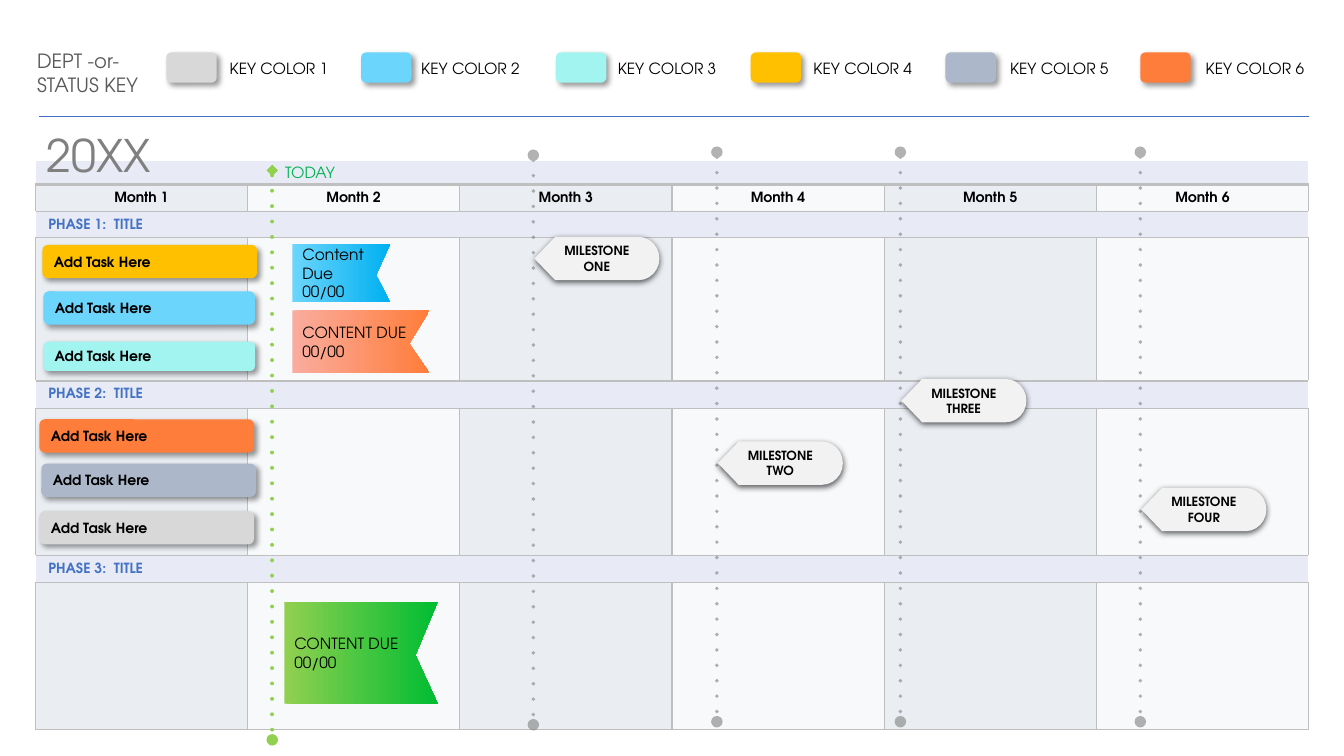
"""Build a six-month roadmap slide with a colour key, phases, tasks and milestones."""
from lxml import etree
from pptx import Presentation
from pptx.dml.color import RGBColor
from pptx.enum import shapes, text
from pptx.oxml import ns
from pptx.util import Inches, Pt

FONT = "TeX Gyre Adventor"
COLORS = {
    "grey": "D8D8D8", "blue": "6CD5FC", "aqua": "A1F4EF", "gold": "FFC000",
    "slate": "ACB8CA", "orange": "FF7D3A", "band": "E8EBF5", "odd": "EAEEF3",
    "even": "F7F9FB", "border": "BFBFBF", "phase": "4472C4", "rule": "3F6FC3",
    "black": "000000", "key": "595959", "year": "808080", "today": "00B050",
    "today_line": "92D050", "line": "7F7F7F", "milestone": "F2F2F2",
    "deep_blue": "00B0F0", "pink": "FAAC9F", "green": "00BD32",
}
RGB = {name: RGBColor.from_string(value) for name, value in COLORS.items()}


def write(tf, content, size, color="black", bold=False, align=text.PP_ALIGN.LEFT):
    """Fill a text frame and format its runs."""
    tf.text = content
    for p in tf.paragraphs:
        p.alignment = align
        for r in p.runs:
            r.font.name, r.font.size, r.font.bold = FONT, Pt(size), bold
            r.font.color.rgb = RGB[color]


def add_box(kind, x, y, w, h, color, alpha=40, blur=4, dist=3, angle=45):
    """Add a borderless filled shape with a soft shadow."""
    sp = s.shapes.add_shape(kind, Inches(x), Inches(y), Inches(w), Inches(h))
    sp.fill.solid()
    sp.fill.fore_color.rgb = RGB[color]
    sp.line.fill.background()
    sp.shadow.inherit = False
    effects = sp._element.spPr.find(ns.qn("a:effectLst"))
    shadow = etree.SubElement(effects, ns.qn("a:outerShdw"), blurRad=str(Pt(blur)),
                              dist=str(Pt(dist)), dir=str(angle * 60000), algn="t", rotWithShape="0")
    clr = etree.SubElement(shadow, ns.qn("a:srgbClr"), val=COLORS["black"])
    etree.SubElement(clr, ns.qn("a:alpha"), val=str(alpha * 1000))
    return sp


prs = Presentation()
prs.slide_width, prs.slide_height = Inches(13.33), Inches(7.5)
s = prs.slides.add_slide(prs.slide_layouts[5])

row_heights = [0.24, 0.27, 0.26, 1.42, 0.27, 1.46, 0.27, 1.46]
phase_rows = {2: "PHASE 1:  TITLE", 4: "PHASE 2:  TITLE", 6: "PHASE 3:  TITLE"}
frame = s.shapes.add_table(8, 6, Inches(0.35), Inches(1.59), Inches(12.63), Inches(5.64))
tbl = frame.table
tbl.first_row = tbl.horz_banding = False
for col in tbl.columns:
    col.width = Inches(12.63 / 6)
for i, height in enumerate(row_heights):
    tbl.rows[i].height = Inches(height)
    for j in range(6):
        cell = tbl.cell(i, j)
        cell.margin_left = cell.margin_right = cell.margin_top = Inches(0.01)
        cell.margin_bottom = 0
        cell.vertical_anchor = text.MSO_ANCHOR.MIDDLE
        if i == 0:
            sides = {"B": 2.25}
        elif i in phase_rows:
            sides = {"T": 1, "B": 1}
        else:
            sides = {"L": 1, "R": 1, "T": 2.25 if i == 1 else 1, "B": 1}
        tcPr = cell._tc.get_or_add_tcPr()
        for side, width in sides.items():
            ln = etree.SubElement(tcPr, ns.qn(f"a:ln{side}"), w=str(Pt(width)))
            fill = etree.SubElement(ln, ns.qn("a:solidFill"))
            etree.SubElement(fill, ns.qn("a:srgbClr"), val=COLORS["border"])
        is_band = i == 0 or i in phase_rows
        cell.fill.solid()
        cell.fill.fore_color.rgb = RGB["band" if is_band else ("odd", "even")[j % 2]]
        if i == 1:
            write(cell.text_frame, f"Month {j + 1}", 10, bold=True, align=text.PP_ALIGN.CENTER)
        elif i in phase_rows and j == 0:
            cell.margin_left = Inches(0.13)
            write(cell.text_frame, phase_rows[i], 10, "phase", True)
        else:
            cell.text_frame.paragraphs[0]._p.get_or_add_endParaRPr().set("sz", "1000")
    if is_band:
        tbl.cell(i, 0).merge(tbl.cell(i, 5))

labels = [(0.27, 0.44, 1.23, 0.58, "DEPT -or-\nSTATUS KEY", 14, "key"),
          (2.73, 1.57, 0.85, 0.29, "TODAY", 11, "today")]
key_colors = ["grey", "blue", "aqua", "gold", "slate", "orange"]
key_lefts = [2.18, 4.08, 6.03, 7.97, 9.92, 11.86]
for i, (color, left) in enumerate(zip(key_colors, key_lefts)):
    add_box(shapes.MSO_SHAPE.ROUNDED_RECTANGLE, 1.65 + 1.932 * i, 0.52, 0.5, 0.3, color)
    labels.append((left, 0.54, 1.24, 0.29, f"KEY COLOR {i + 1}", 11, "black"))
for x, y, w, h, content, size, color in labels:
    tb = s.shapes.add_textbox(Inches(x), Inches(y), Inches(w), Inches(h))
    tb.text_frame.word_wrap = True
    write(tb.text_frame, content, size, color)

milestones = [(5.29, 1.54, 2.35, "MILESTONE ONE"), (7.11, 1.51, 4.38, "MILESTONE TWO"),
              (8.93, 1.51, 3.76, "MILESTONE THREE"), (11.31, 1.51, 4.84, "MILESTONE FOUR")]
lines = [(x, top, x, top + 5.65, "line", "oval") for x, top, _, _ in milestones]
lines += [(2.7, 1.69, 2.7, 7.34, "today_line", "diamond"),
          (0.39, 1.16, 12.98, 1.16, "rule", None)]
for x1, y1, x2, y2, color, head in lines:
    cn = s.shapes.add_connector(shapes.MSO_CONNECTOR.STRAIGHT, Inches(x1), Inches(y1),
                                Inches(x2), Inches(y2))
    cn.line.color.rgb = RGB[color]
    cn.line.width = Pt(2.75 if head else 0.75)
    etree.SubElement(cn._element.spPr, ns.qn("a:effectLst"))
    if head:
        ln = cn.line._get_or_add_ln()
        ln.set("cap", "rnd")
        etree.SubElement(ln, ns.qn("a:prstDash"), val="dot")
        etree.SubElement(ln, ns.qn("a:round"))
        etree.SubElement(ln, ns.qn("a:headEnd"), type=head)
        etree.SubElement(ln, ns.qn("a:tailEnd"), type="oval")
        if color == "line":
            etree.SubElement(ln.find(".//" + ns.qn("a:srgbClr")), ns.qn("a:alpha"), val="60000")

for x, _, y, name in milestones:
    sp = add_box(shapes.MSO_SHAPE.FLOWCHART_DISPLAY, x + 0.01, y, 1.24, 0.43, "milestone",
                 63, 4.5, 1.5, 90)
    tf = sp.text_frame
    tf.margin_left = tf.margin_right = tf.margin_top = tf.margin_bottom = 0
    write(tf, name, 9, bold=True, align=text.PP_ALIGN.CENTER)

tasks = [(0.42, 2.43, 2.13, 0.33, "gold"), (0.43, 2.89, 2.1, 0.33, "blue"),
         (0.43, 3.39, 2.1, 0.29, "aqua"), (0.39, 4.16, 2.13, 0.33, "orange"),
         (0.41, 4.6, 2.13, 0.33, "slate"), (0.39, 5.07, 2.13, 0.33, "grey")]
for task in tasks:
    sp = add_box(shapes.MSO_SHAPE.ROUNDED_RECTANGLE, *task)
    write(sp.text_frame, "Add Task Here", 10, bold=True)

flags = [(2.9, 2.42, 0.97, 0.58, 0.14, 0.31, "blue", "deep_blue", "Content Due\n00/00"),
         (2.82, 5.97, 1.52, 1.01, 0.22, 0.53, "today_line", "green", "CONTENT DUE\n00/00"),
         (2.9, 3.08, 1.36, 0.62, 0.2, 0.33, "pink", "orange", "CONTENT DUE 00/00")]
for x, y, w, h, notch, notch_y, start, end, content in flags:
    fb = s.shapes.build_freeform(Inches(x), Inches(y))
    corners = [(x + w, y), (x + w - notch, y + notch_y), (x + w, y + h), (x, y + h)]
    fb.add_line_segments([(Inches(px), Inches(py)) for px, py in corners])
    sp = fb.convert_to_shape()
    sp.fill.gradient()
    sp.fill.gradient_angle = 0
    for stop, color in zip(sp.fill.gradient_stops, (start, end)):
        stop.color.rgb = RGB[color]
    for stop, position in zip(sp.fill.gradient_stops, (0, 1)):
        stop.position = position
    sp.line.fill.background()
    sp.shadow.inherit = False
    sp.text_frame.word_wrap = True
    sp.text_frame.vertical_anchor = text.MSO_ANCHOR.MIDDLE
    write(sp.text_frame, content, 11)

title = s.shapes.title
title.left, title.top, title.width, title.height = (Inches(v) for v in (0.36, 1.22, 1.66, 0.64))
title.text_frame.vertical_anchor = text.MSO_ANCHOR.TOP
title.text_frame.auto_size = text.MSO_AUTO_SIZE.NONE
write(title.text_frame, "20XX", 32, "year")
s.shapes._spTree.append(title._element)

prs.save("out.pptx")
